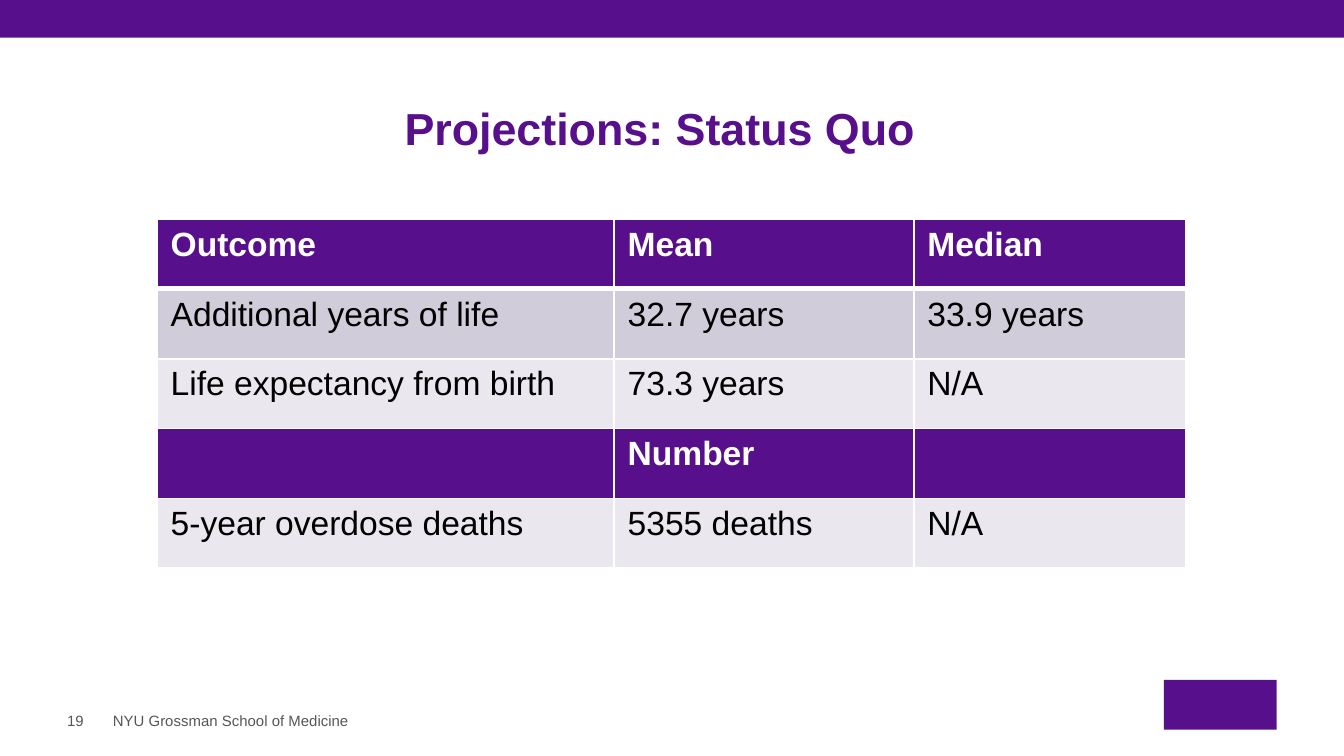
from dataclasses import dataclass

import pptx
import pptx.dml.color
import pptx.enum.shapes
import pptx.enum.text
import pptx.oxml
import pptx.oxml.ns
import pptx.util

Inches = pptx.util.Inches


@dataclass(frozen=True)
class Theme:
    font: str = "Arial"
    purple: str = "580F8B"
    white: str = "FFFFFF"
    black: str = "000000"
    gray: str = "53565A"
    band_dark: str = "D1CCDA"
    band_light: str = "EAE7EE"
    title_size: int = 24
    table_size: int = 18
    footer_size: int = 8
    border: int = 1
    header_border: int = 3


@dataclass(frozen=True)
class Area:
    left: float
    top: float
    width: float
    height: float

    def lengths(self) -> tuple:
        return tuple(Inches(n) for n in (self.left, self.top, self.width, self.height))


@dataclass(frozen=True)
class OutcomeRow:
    texts: tuple[str, str, str]
    fill: str
    heading: bool = False


@dataclass(frozen=True)
class FooterItem:
    text: str
    area: Area


THEME = Theme()

ROWS = (
    OutcomeRow(("Outcome", "Mean", "Median"), THEME.purple, True),
    OutcomeRow(("Additional years of life", "32.7 years", "33.9 years"), THEME.band_dark),
    OutcomeRow(("Life expectancy from birth", "73.3 years", "N/A"), THEME.band_light),
    OutcomeRow(("", "Number", ""), THEME.purple, True),
    OutcomeRow(("5-year overdose deaths", "5355 deaths", "N/A"), THEME.band_light),
)
COLUMN_WIDTHS = (3.4, 2.23, 2.02)
ROW_HEIGHT = 0.52

FOOTER = (
    FooterItem("NYU Grossman School of Medicine", Area(0.84, 5.3, 3.7, 0.13)),
    FooterItem("19", Area(0.5, 5.3, 0.28, 0.13)),
)


def rgb(color: str) -> pptx.dml.color.RGBColor:
    return pptx.dml.color.RGBColor.from_string(color)


def style_font(para, size: int, color: str, bold: bool = False) -> None:
    para.font.name = THEME.font
    para.font.size = pptx.util.Pt(size)
    para.font.bold = bold
    para.font.color.rgb = rgb(color)


def clear_margins(frame) -> None:
    frame.margin_left = frame.margin_right = 0
    frame.margin_top = frame.margin_bottom = 0


def add_block(slide, area: Area) -> None:
    block = slide.shapes.add_shape(
        pptx.enum.shapes.MSO_SHAPE.RECTANGLE, *area.lengths())
    block.shadow.inherit = False
    block.fill.solid()
    block.fill.fore_color.rgb = rgb(THEME.purple)
    block.line.fill.background()


def add_footer_item(slide, item: FooterItem) -> None:
    frame = slide.shapes.add_textbox(*item.area.lengths()).text_frame
    clear_margins(frame)
    frame.word_wrap = True
    frame.vertical_anchor = pptx.enum.text.MSO_ANCHOR.MIDDLE
    frame.text = item.text
    style_font(frame.paragraphs[0], THEME.footer_size, THEME.gray)


def set_title(slide, text: str, area: Area) -> None:
    title = slide.shapes.title
    title.left, title.top, title.width, title.height = area.lengths()
    frame = title.text_frame
    clear_margins(frame)
    frame.word_wrap = True
    frame.auto_size = pptx.enum.text.MSO_AUTO_SIZE.NONE
    frame.vertical_anchor = pptx.enum.text.MSO_ANCHOR.BOTTOM
    frame.text = text
    para = frame.paragraphs[0]
    para.alignment = pptx.enum.text.PP_ALIGN.LEFT
    para.line_spacing = 0.85
    style_font(para, THEME.title_size, THEME.purple, True)


def set_borders(cell, top: int, bottom: int) -> None:
    """Add the cell borders; call before setting the cell fill."""
    properties = cell._tc.get_or_add_tcPr()
    namespace = pptx.oxml.ns.nsdecls("a")
    widths = {"lnL": THEME.border, "lnR": THEME.border, "lnT": top, "lnB": bottom}
    for side, width in widths.items():
        properties.append(pptx.oxml.parse_xml(
            f'<a:{side} {namespace} w="{pptx.util.Pt(width)}"><a:solidFill>'
            f'<a:srgbClr val="{THEME.white}"/></a:solidFill></a:{side}>'))


def add_outcome_table(slide, left: float, top: float) -> None:
    area = Area(left, top, sum(COLUMN_WIDTHS), ROW_HEIGHT * len(ROWS))
    table = slide.shapes.add_table(
        len(ROWS), len(COLUMN_WIDTHS), *area.lengths()).table
    for column, width in zip(table.columns, COLUMN_WIDTHS):
        column.width = Inches(width)
    for index, row in enumerate(ROWS):
        table.rows[index].height = Inches(ROW_HEIGHT)
        # The line under the first row is heavier than the others
        top_width = THEME.header_border if index == 1 else THEME.border
        bottom_width = THEME.header_border if index == 0 else THEME.border
        color = THEME.white if row.heading else THEME.black
        for cell, text in zip(table.rows[index].cells, row.texts):
            set_borders(cell, top_width, bottom_width)
            cell.fill.solid()
            cell.fill.fore_color.rgb = rgb(row.fill)
            cell.text = text
            style_font(cell.text_frame.paragraphs[0], THEME.table_size,
                       color, row.heading)


def main() -> None:
    deck = pptx.Presentation()
    # Widescreen, 16 to 9
    deck.slide_width = Inches(10)
    deck.slide_height = deck.slide_width * 9 // 16
    page = deck.slides.add_slide(deck.slide_layouts.get_by_name("Title Only"))

    # Top band and plain brand block
    add_block(page, Area(0, 0, 10, 0.28))
    add_block(page, Area(8.66, 5.06, 0.84, 0.37))

    # Footer
    for item in FOOTER:
        add_footer_item(page, item)

    # Title and outcomes
    set_title(page, "Projections: Status Quo", Area(3.01, 0.81, 3.97, 0.34))
    add_outcome_table(page, 1.17, 1.63)

    deck.save("out.pptx")


if __name__ == "__main__":
    main()
